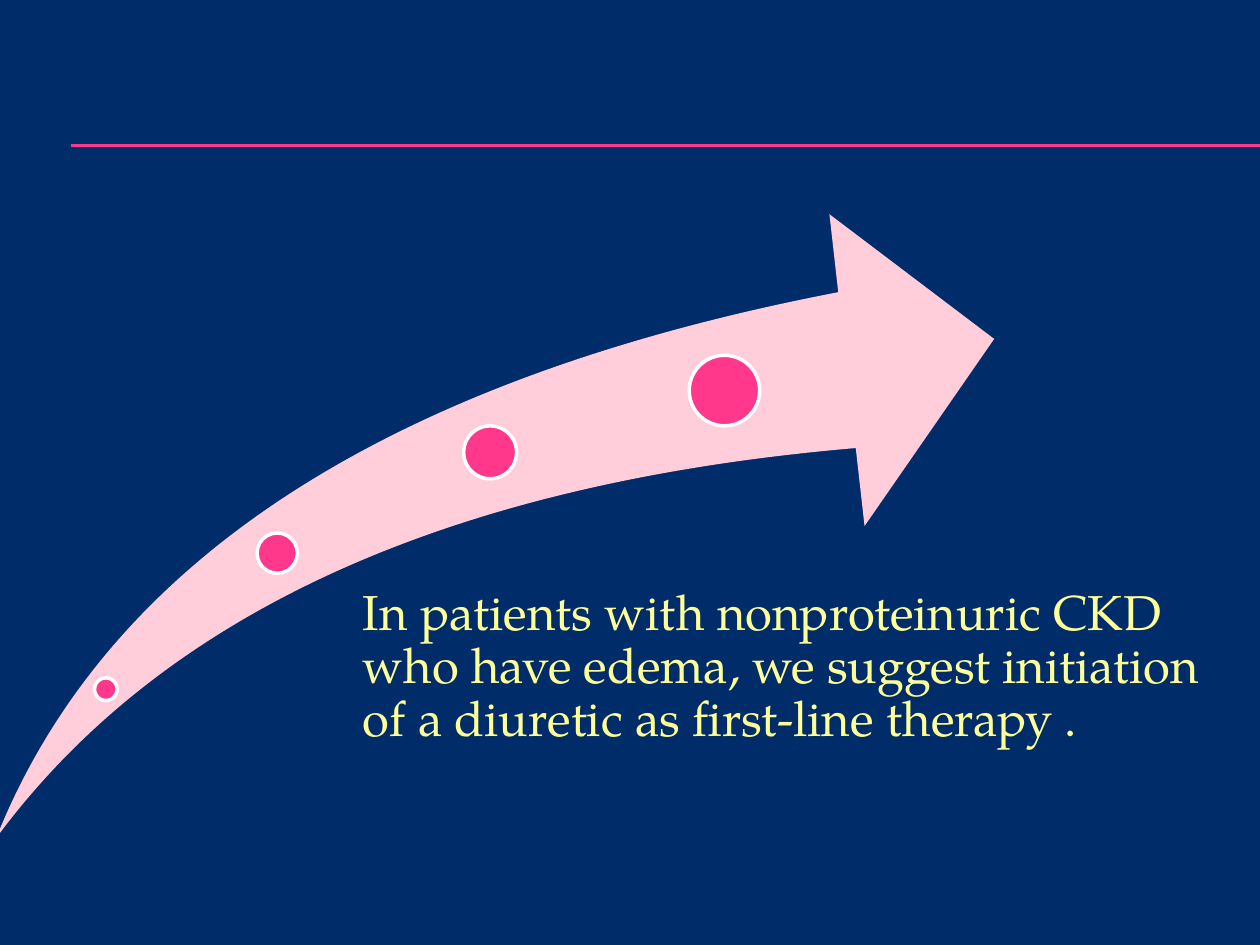
from dataclasses import dataclass

from lxml.etree import SubElement
from pptx import Presentation
from pptx.dml.color import RGBColor
from pptx.enum.shapes import MSO_CONNECTOR, MSO_SHAPE
from pptx.enum.text import MSO_ANCHOR, PP_ALIGN
from pptx.oxml.ns import qn
from pptx.slide import Slide
from pptx.util import Inches, Pt

NAVY = RGBColor(0x00, 0x2D, 0x69)
PINK = RGBColor(0xFF, 0x38, 0x8C)
PALE_PINK = RGBColor(0xFF, 0xCE, 0xDA)
WHITE = RGBColor(0xFF, 0xFF, 0xFF)
YELLOW = RGBColor(0xFF, 0xFF, 0x99)


@dataclass(frozen=True)
class Milestone:
    left: float
    top: float
    diameter: float


MILESTONES = (
    Milestone(0.75, 5.38, 0.18),
    Milestone(2.04, 4.23, 0.32),
    Milestone(3.68, 3.38, 0.42),
    Milestone(5.47, 2.82, 0.56),
)
RULE_HEIGHTS = (1.15, 1.16)
ADVICE = (
    "In patients with nonproteinuric CKD who have edema, "
    "we suggest initiation of a diuretic as first-line therapy ."
)


def draw_rule(slide: Slide, height: float) -> None:
    rule = slide.shapes.add_connector(
        MSO_CONNECTOR.STRAIGHT, Inches(0.56), Inches(height), Inches(10), Inches(height)
    )
    rule.line.color.rgb = PINK
    rule.line.width = Pt(0.75)
    SubElement(rule._element.spPr, qn("a:effectLst"))


def draw_swoosh(slide: Slide) -> None:
    swoosh = slide.shapes.add_shape(
        MSO_SHAPE.SWOOSH_ARROW, Inches(-0.03), Inches(1.7), Inches(7.92), Inches(4.95)
    )
    swoosh.shadow.inherit = False
    swoosh.adjustments[0] = 0.25
    swoosh.adjustments[1] = 0.25
    swoosh.fill.solid()
    swoosh.fill.fore_color.rgb = PALE_PINK
    swoosh.line.fill.background()


def draw_milestone(slide: Slide, milestone: Milestone) -> None:
    diameter = Inches(milestone.diameter)
    dot = slide.shapes.add_shape(
        MSO_SHAPE.OVAL, Inches(milestone.left), Inches(milestone.top), diameter, diameter
    )
    dot.shadow.inherit = False
    dot.fill.solid()
    dot.fill.fore_color.rgb = PINK
    dot.line.color.rgb = WHITE
    dot.line.width = Pt(2)


def write_advice(slide: Slide) -> None:
    frame = slide.shapes.add_textbox(
        Inches(2.58), Inches(4.67), Inches(7.21), Inches(1.58)
    ).text_frame
    frame.word_wrap = True
    frame.vertical_anchor = MSO_ANCHOR.TOP
    frame.margin_left = Inches(0.3)
    frame.margin_top = frame.margin_right = frame.margin_bottom = 0
    advice = frame.paragraphs[0]
    advice.text = ADVICE
    advice.alignment = PP_ALIGN.LEFT
    advice.line_spacing = 0.9
    advice.font.name = "TeX Gyre Pagella"
    advice.font.size = Pt(28)
    advice.font.color.rgb = YELLOW


def main() -> None:
    """Build the slide on diuretic therapy in nonproteinuric CKD."""
    deck = Presentation()
    deck.slide_width, deck.slide_height = Inches(10), Inches(7.5)
    slide = deck.slides.add_slide(deck.slide_layouts[6])
    slide.background.fill.solid()
    slide.background.fill.fore_color.rgb = NAVY
    for height in RULE_HEIGHTS:
        draw_rule(slide, height)
    draw_swoosh(slide)
    for milestone in MILESTONES:
        draw_milestone(slide, milestone)
    write_advice(slide)
    deck.save("out.pptx")


if __name__ == "__main__":
    main()
